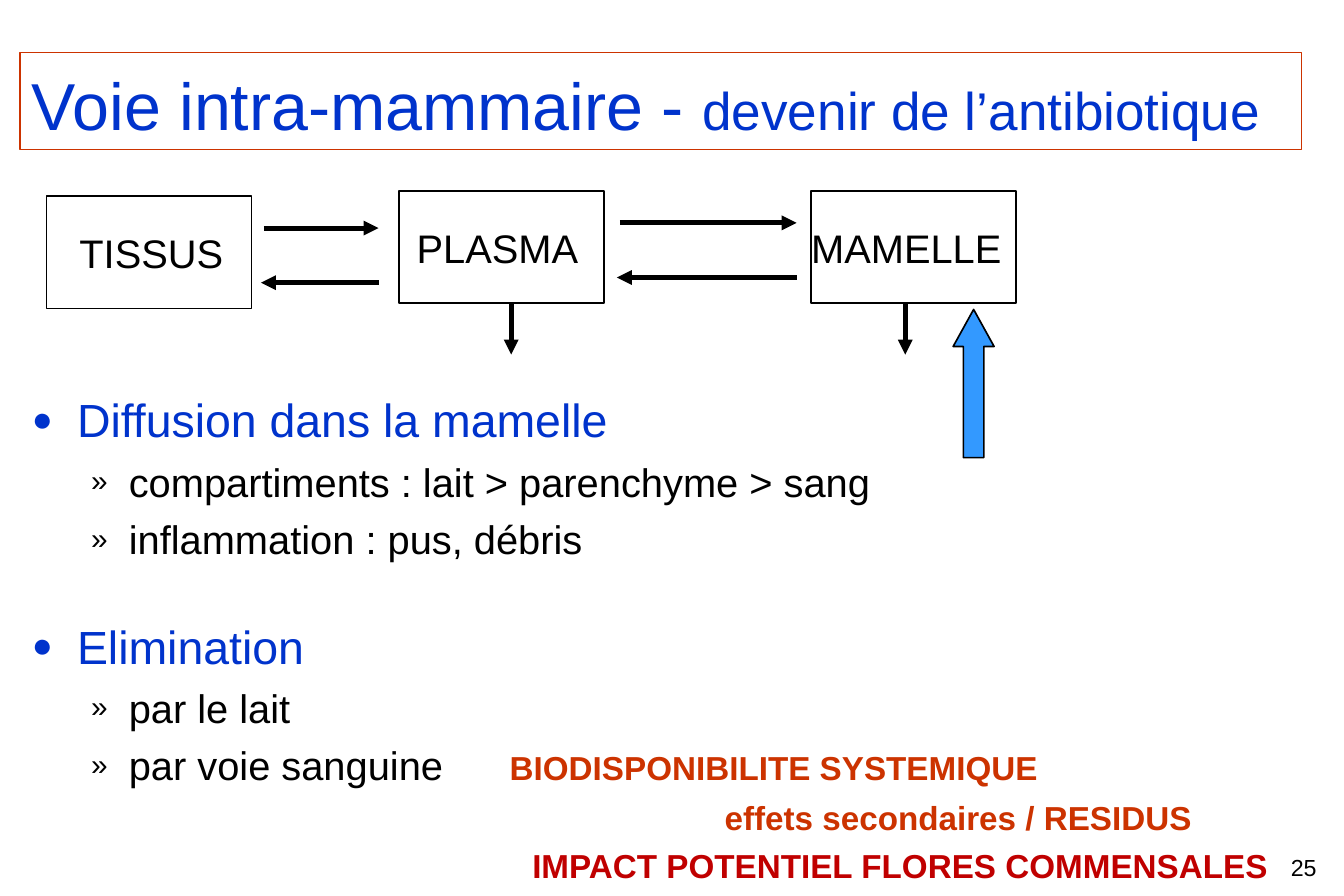
from lxml import etree
from pptx import Presentation
from pptx.dml.color import RGBColor
from pptx.enum.shapes import MSO_CONNECTOR, MSO_SHAPE
from pptx.enum.text import MSO_ANCHOR, PP_ALIGN
from pptx.oxml.ns import qn
from pptx.util import Cm, Pt

RECT, UP, LINE = MSO_SHAPE.RECTANGLE, MSO_SHAPE.UP_ARROW, MSO_CONNECTOR.STRAIGHT
LEFT, RIGHT = PP_ALIGN.LEFT, PP_ALIGN.RIGHT
MIDDLE, BOTTOM = MSO_ANCHOR.MIDDLE, MSO_ANCHOR.BOTTOM
BLUE, BLACK, RED, DARK, SKY = "0033CC", "000000", "CC3300", "C00000", "3399FF"
HEAD = dict(mark="●", left=0.96, hang=0.96, size=28, hue=BLUE)
ITEM = dict(mark="»", left=2.06, hang=0.8, size=24, hue=BLACK, gap=6)


def paint(hue):
    """Turn a hex string into a colour."""
    return RGBColor.from_string(hue)


def style(font, size, hue, bold=False):
    """Set the face, size and colour of a font."""
    font.name, font.size, font.bold = "Arial", Pt(size), bold
    font.color.rgb = paint(hue)


def block(slide, kind, box, fill=None, edge=BLACK):
    """Add a preset shape with a thin outline."""
    shape = slide.shapes.add_shape(kind, *map(Cm, box))
    shape.shadow.inherit = False
    if fill:
        shape.fill.solid()
        shape.fill.fore_color.rgb = paint(fill)
    else:
        shape.fill.background()
    shape.line.color.rgb = paint(edge)
    shape.line.width = Pt(1)
    return shape


def arrow(slide, x1, y1, x2, y2):
    """Draw a thick black arrow."""
    line = slide.shapes.add_connector(LINE, Cm(x1), Cm(y1), Cm(x2), Cm(y2))
    line.line.color.rgb = paint(BLACK)
    line.line.width = Pt(3)
    etree.SubElement(line.line._get_or_add_ln(), qn("a:tailEnd"), type="triangle")
    etree.SubElement(line._element.spPr, qn("a:effectLst"))


def title(slide, box):
    """Write the framed title in two sizes."""
    frame = block(slide, RECT, box, edge=RED).text_frame
    frame.word_wrap, frame.vertical_anchor = True, BOTTOM
    para = frame.paragraphs[0]
    para.alignment = LEFT
    for text, size in (("Voie intra-mammaire - ", 40), ("devenir de l’antibiotique", 32)):
        run = para.add_run()
        run.text = text
        style(run.font, size, BLUE)


def stage(slide, box, label, inset):
    """Draw one compartment with its label."""
    frame = block(slide, RECT, box).text_frame
    frame.word_wrap, frame.vertical_anchor = False, MIDDLE
    frame.margin_left, frame.margin_right = Cm(inset), 0
    para = frame.paragraphs[0]
    para.text, para.alignment = label, LEFT
    style(para.font, 24, BLACK)


def swap(slide, box):
    """Draw the two opposite arrows between compartments."""
    x, y, wide, high = box
    arrow(slide, x, y, x + wide, y)
    arrow(slide, x + wide, y + high, x - 0.06, y + high)


def flow(slide, box):
    """Lay out the compartments and their exchanges."""
    x, y, wide, high = box
    for label, dx, dy, inset in (("TISSUS", 0, 0.11, 0.7), ("PLASMA", 7.49, 0, 0.38),
                                 ("MAMELLE", 16.26, 0, 0)):
        stage(slide, (x + dx, y + dy, 4.36, high), label, inset)
    for dx, dy, span in ((4.62, 0.79, 2.44), (12.19, 0.68, 3.76)):
        swap(slide, (x + dx, y + dy, span, 1.16))
    for dx in (9.88, 18.26):
        arrow(slide, x + dx, y + high, x + dx, y + 3.48)
    entry = block(slide, UP, (x + wide, y + 2.52, 0.87, 3.15), SKY)
    entry.adjustments[0], entry.adjustments[1] = 0.5, 0.905


def entry(para, text, left, size, hue, hang=0, gap=0, mark=None, bold=False):
    """Write one line of the list, with or without a bullet."""
    para.text = text
    props = para._p.get_or_add_pPr()
    props.set("marL", str(Cm(left)))
    props.set("indent", str(-Cm(hang)))
    if mark:
        shade = etree.SubElement(props, qn("a:buClr"))
        etree.SubElement(shade, qn("a:srgbClr"), val=hue)
        etree.SubElement(props, qn("a:buSzPct"), val="75000")
        etree.SubElement(props, qn("a:buFont"), typeface="Arial")
        etree.SubElement(props, qn("a:buChar"), char=mark)
    if gap:
        para.space_before = Pt(gap)
    style(para.font, size, hue, bold)


def points(slide, box):
    """Write the list and its red conclusions."""
    frame = slide.shapes.add_textbox(*map(Cm, box)).text_frame
    frame.word_wrap = True
    rows = (
        ("Diffusion dans la mamelle", HEAD),
        ("compartiments : lait > parenchyme > sang", ITEM),
        ("inflammation : pus, débris", ITEM),
        ("Elimination", dict(HEAD, gap=33)),
        ("par le lait", ITEM),
        ("par voie sanguine\t\t", ITEM),
        ("effets secondaires / RESIDUS", dict(left=14.73, size=20, hue=RED, gap=5, bold=True)),
        ("IMPACT POTENTIEL FLORES COMMENSALES",
         dict(left=10.64, size=20, hue=DARK, gap=5, bold=True)),
    )
    for i, (text, look) in enumerate(rows):
        para = frame.add_paragraph() if i else frame.paragraphs[0]
        entry(para, text, **look)
        if text.endswith("\t"):
            run = para.add_run()
            run.text = "BIODISPONIBILITE SYSTEMIQUE"
            style(run.font, 20, RED, True)


def number(slide, box):
    """Write the slide number."""
    frame = slide.shapes.add_textbox(*map(Cm, box)).text_frame
    frame.word_wrap, frame.vertical_anchor = False, MIDDLE
    para = frame.paragraphs[0]
    para.text, para.alignment = "25", RIGHT
    style(para.font, 14, BLACK)


def main():
    """Build and save the slide."""
    deck = Presentation()
    deck.slide_width, deck.slide_height = Cm(28.58), Cm(19.05)
    slide = deck.slides.add_slide(deck.slide_layouts[6])
    number(slide, (27.15, 18.01, 1.1, 0.84))
    title(slide, (0.43, 1.12, 27.25, 2.06))
    points(slide, (0.43, 8.2, 27.69, 9.75))
    flow(slide, (0.99, 4.06, 19.28, 2.39))
    deck.save("out.pptx")


if __name__ == "__main__":
    main()
